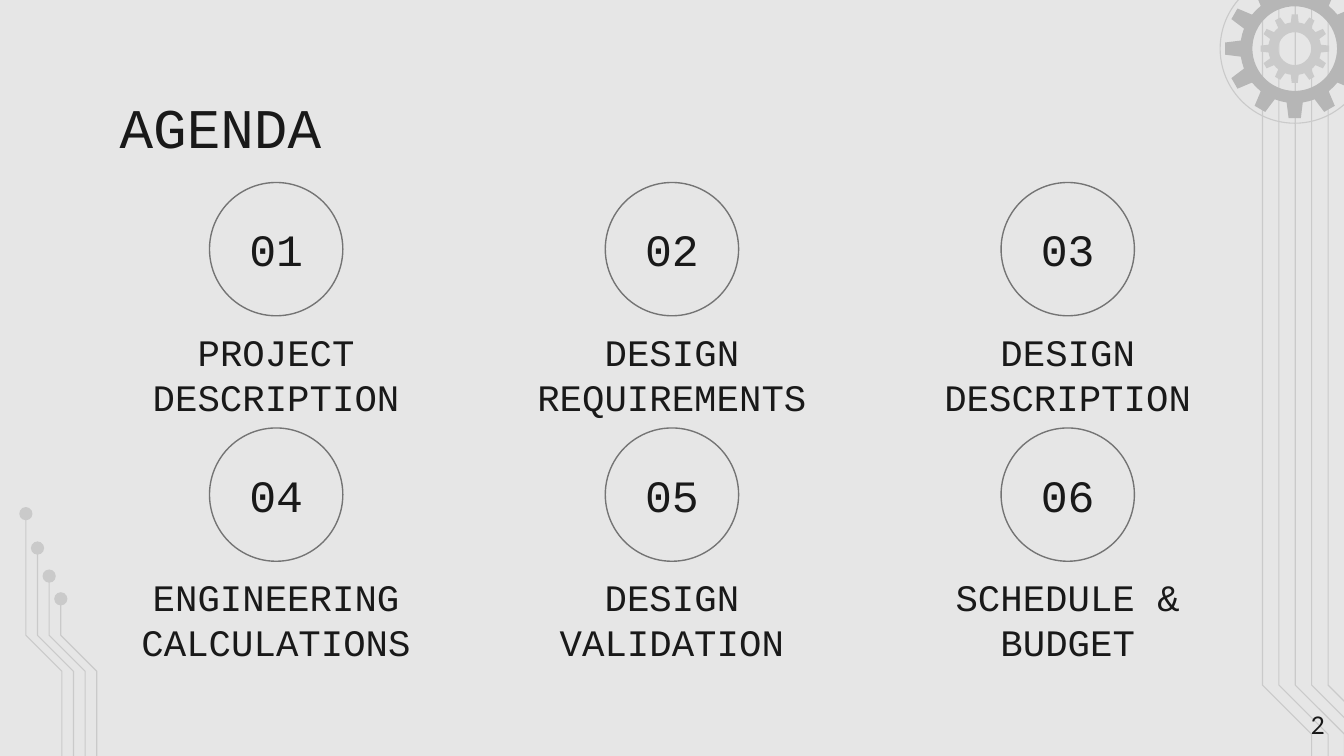
from dataclasses import dataclass
from math import cos, radians, sin

from pptx import Presentation
from pptx.dml.color import RGBColor
from pptx.enum.shapes import MSO_SHAPE as Preset
from pptx.enum.text import MSO_ANCHOR as Anchor, MSO_AUTO_SIZE as AutoSize, PP_ALIGN as Align
from pptx.shapes.base import BaseShape
from pptx.slide import Slide
from pptx.util import Cm, Pt

COLORS = {
    "background": "E6E6E6",
    "trace": "CACACA",
    "gear": "B6B6B6",
    "ring": "747474",
    "text": "191919",
}
SLIDE_WIDTH, SLIDE_HEIGHT = 25.4, 14.29
GEAR_X, GEAR_Y = 24.47, 0.92
TEETH = 12
COLUMN_STEP, ROW_STEP = 7.48, 4.64
RING_SIZE, LABEL_WIDTH = 2.52, 6.45


@dataclass
class Box:
    left: float
    top: float
    width: float
    height: float


@dataclass
class TextStyle:
    size: float
    font: str = "Courier New"
    align: Align = Align.CENTER
    anchor: Anchor = Anchor.TOP


@dataclass
class Trace:
    x: float
    top: float
    bend: float
    run: float


@dataclass
class Gear:
    tip: float
    root: float
    hole: float
    color: str


AGENDA = [
    "PROJECT DESCRIPTION", "DESIGN REQUIREMENTS", "DESIGN DESCRIPTION",
    "ENGINEERING CALCULATIONS", "DESIGN VALIDATION", "SCHEDULE & BUDGET",
]
RIGHT_TRACES = [Trace(23.86 + 0.31 * i, 0, 12.95, 0.93) for i in range(5)]
LEFT_TRACES = [Trace(0.49 + 0.22 * i, top, 12.01, 0.68)
               for i, top in enumerate((9.71, 10.36, 10.89, 11.32))]
GEARS = [Gear(0.65, 0.5, 0.31, "trace"), Gear(1.32, 1.03, 0.8, "gear")]
TITLE_STYLE = TextStyle(30, align=Align.LEFT)
NUMBER_STYLE = TextStyle(24, anchor=Anchor.BOTTOM)
LABEL_STYLE = TextStyle(20)
PAGE_STYLE = TextStyle(13, font="Lato", align=Align.RIGHT)


def rgb(name: str) -> RGBColor:
    return RGBColor.from_string(COLORS[name])


def lengths(box: Box) -> list[Cm]:
    return [Cm(box.left), Cm(box.top), Cm(box.width), Cm(box.height)]


def paint(shape: BaseShape, fill: str = "", line: str = "", width: float = 0.6) -> None:
    shape.shadow.inherit = False
    if fill:
        shape.fill.solid()
        shape.fill.fore_color.rgb = rgb(fill)
    else:
        shape.fill.background()
    if line:
        shape.line.color.rgb = rgb(line)
        shape.line.width = Pt(width)
    else:
        shape.line.fill.background()


def write(shape: BaseShape, text: str, style: TextStyle) -> None:
    frame = shape.text_frame
    frame.word_wrap = True
    frame.auto_size = AutoSize.NONE
    frame.vertical_anchor = style.anchor
    frame.margin_left = frame.margin_right = Cm(0.25)
    frame.margin_top = frame.margin_bottom = Cm(0.25)
    paragraph = frame.paragraphs[0]
    paragraph.alignment = style.align
    run = paragraph.add_run()
    run.text = text
    run.font.name = style.font
    run.font.size = Pt(style.size)
    run.font.color.rgb = rgb("text")


def add_text(slide: Slide, box: Box, text: str, style: TextStyle) -> None:
    write(slide.shapes.add_textbox(*lengths(box)), text, style)


def add_circle(slide: Slide, x: float, y: float, size: float) -> BaseShape:
    box = Box(x - size / 2, y - size / 2, size, size)
    return slide.shapes.add_shape(Preset.OVAL, *lengths(box))


def add_trace(slide: Slide, trace: Trace) -> None:
    end = trace.x + trace.run
    points = [(trace.x, trace.bend), (end, trace.bend + trace.run), (end, SLIDE_HEIGHT)]
    builder = slide.shapes.build_freeform(Cm(trace.x), Cm(trace.top))
    builder.add_line_segments([(Cm(x), Cm(y)) for x, y in points], close=False)
    paint(builder.convert_to_shape(), line="trace")


def gear_point(radius: float, angle: float) -> tuple[Cm, Cm]:
    return (Cm(GEAR_X + radius * sin(radians(angle))),
            Cm(GEAR_Y - radius * cos(radians(angle))))


def add_gear(slide: Slide, gear: Gear) -> None:
    tooth = [(gear.root, -8.5), (gear.tip, -5), (gear.tip, 5), (gear.root, 8.5), (gear.root, 15)]
    outline = [gear_point(radius, angle + 360 / TEETH * i)
               for i in range(TEETH) for radius, angle in tooth]
    hole = [gear_point(gear.hole, angle) for angle in range(0, 360, 6)]
    builder = slide.shapes.build_freeform(*outline[0])
    builder.add_line_segments(outline[1:])
    builder.move_to(*hole[0])
    builder.add_line_segments(hole[1:])
    paint(builder.convert_to_shape(), fill=gear.color)


def add_agenda_item(slide: Slide, index: int, label: str) -> None:
    row, column = divmod(index, 3)
    x = SLIDE_WIDTH / 2 + (column - 1) * COLUMN_STEP
    top = 3.45 + row * ROW_STEP
    ring = add_circle(slide, x, top + RING_SIZE / 2, RING_SIZE)
    paint(ring, line="ring", width=0.75)
    number_box = Box(x - RING_SIZE / 2, top + 0.54, RING_SIZE, 1.47)
    add_text(slide, number_box, f"{index + 1:02}", NUMBER_STYLE)
    label_box = Box(x - LABEL_WIDTH / 2, top + RING_SIZE, LABEL_WIDTH, 2.11)
    add_text(slide, label_box, label, LABEL_STYLE)


def main() -> None:
    presentation = Presentation()
    presentation.slide_width = Cm(SLIDE_WIDTH)
    presentation.slide_height = Cm(SLIDE_HEIGHT)
    slide = presentation.slides.add_slide(presentation.slide_layouts[5])
    slide.background.fill.solid()
    slide.background.fill.fore_color.rgb = rgb("background")

    for trace in RIGHT_TRACES + LEFT_TRACES:
        add_trace(slide, trace)
    for trace in LEFT_TRACES:
        paint(add_circle(slide, trace.x, trace.top, 0.25), fill="trace")
    for gear in GEARS:
        add_gear(slide, gear)
    paint(add_circle(slide, GEAR_X, GEAR_Y, 2.82), line="trace")

    title = slide.shapes.title
    title.left, title.top, title.width, title.height = lengths(Box(2.01, 1.5, 21.41, 1.6))
    write(title, "AGENDA", TITLE_STYLE)
    for index, label in enumerate(AGENDA):
        add_agenda_item(slide, index, label)
    add_text(slide, Box(23.77, 13.18, 1.52, 1.09), "2", PAGE_STYLE)
    presentation.save("out.pptx")


if __name__ == "__main__":
    main()
